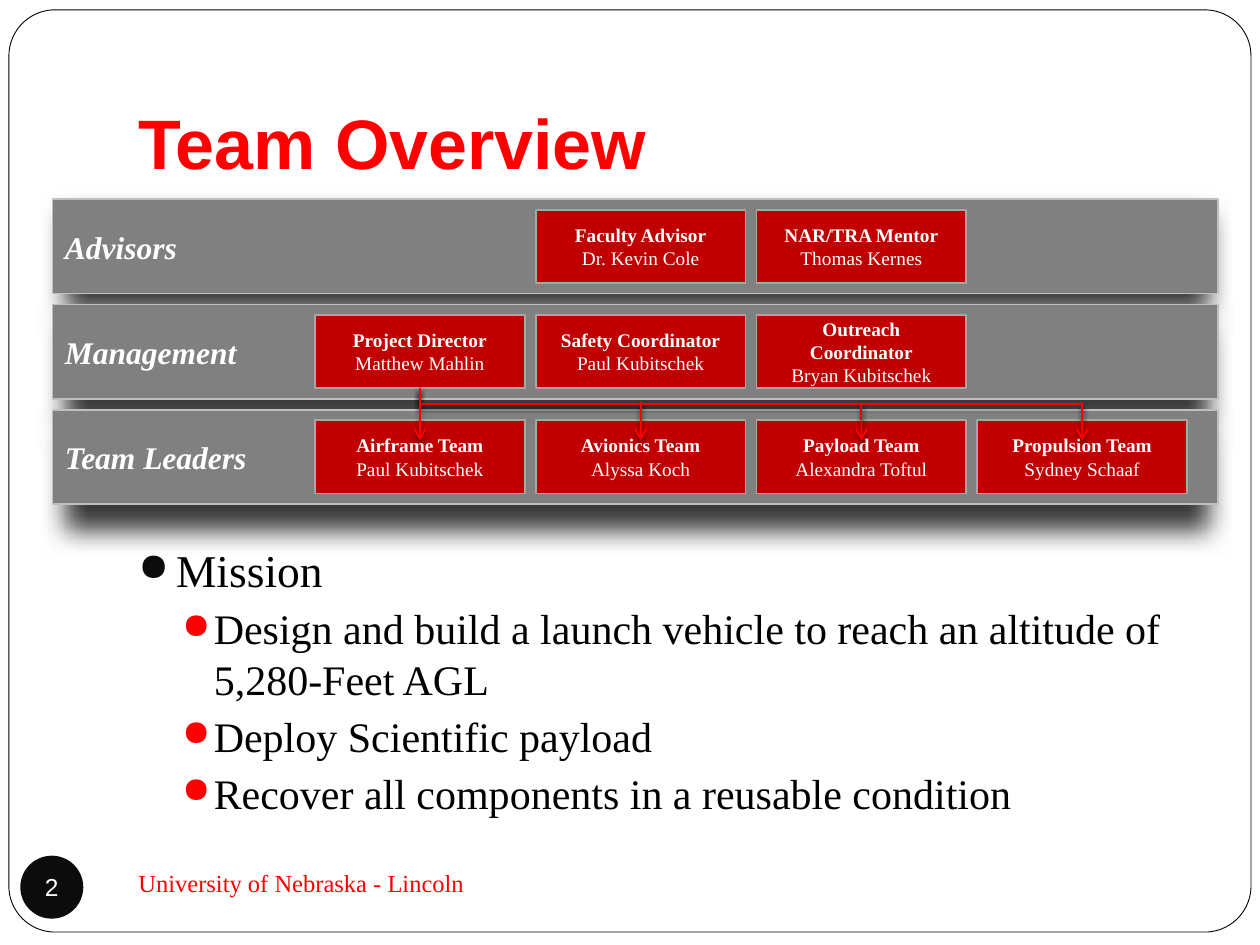
from dataclasses import dataclass

import pptx
import pptx.dml.color
import pptx.enum.shapes
import pptx.enum.text
import pptx.oxml
import pptx.oxml.ns
import pptx.util
from lxml import etree

Cm = pptx.util.Cm
Pt = pptx.util.Pt
qn = pptx.oxml.ns.qn
SHAPE = pptx.enum.shapes.MSO_SHAPE
CONNECTOR = pptx.enum.shapes.MSO_CONNECTOR
ANCHOR = pptx.enum.text.MSO_ANCHOR
ALIGN = pptx.enum.text.PP_ALIGN


@dataclass(frozen=True)
class Theme:
    serif: str = "Times New Roman"
    sans: str = "Arial"
    black: str = "000000"
    ink: str = "0C0C0C"
    white: str = "FFFFFF"
    red: str = "FF0000"
    box: str = "C00000"
    box_line: str = "A6A6A6"
    band: str = "808080"
    band_line: str = "BFBFBF"
    title: int = 40
    body: int = 26
    item: int = 24
    label: int = 18
    small: int = 14
    name: int = 11


T = Theme()

ROWS = [
    ("Advisors", 9, [None, ("Faculty Advisor", "Dr. Kevin Cole"),
                     ("NAR/TRA Mentor", "Thomas Kernes")]),
    ("Management", 14, [("Project Director", "Matthew Mahlin"),
                        ("Safety Coordinator", "Paul Kubitschek"),
                        ("Outreach Coordinator", "Bryan Kubitschek")]),
    ("Team Leaders", 14, [("Airframe Team", "Paul Kubitschek"),
                          ("Avionics Team", "Alyssa Koch"),
                          ("Payload Team", "Alexandra Toftul"),
                          ("Propulsion Team", "Sydney Schaaf")]),
]
MISSION = [
    "Design and build a launch vehicle to reach an altitude of 5,280-Feet AGL",
    "Deploy Scientific payload",
    "Recover all components in a reusable condition",
]


def rgb(color):
    return pptx.dml.color.RGBColor.from_string(color)


def style(p, size, color, font=T.serif, bold=False, italic=False):
    for r in p.runs:
        r.font.name = font
        r.font.size = Pt(size)
        r.font.color.rgb = rgb(color)
        r.font.bold = bold
        r.font.italic = italic


def add_shadow(s, alpha, blur, dist, scale=100):
    sp_pr = s._element.spPr
    for old in sp_pr.findall(qn("a:effectLst")):
        sp_pr.remove(old)
    effects = etree.SubElement(sp_pr, qn("a:effectLst"))
    outer = etree.SubElement(
        effects, qn("a:outerShdw"), blurRad=str(Pt(blur)), dist=str(Pt(dist)),
        dir="5400000", sx=str(scale * 1000), algn="ctr", rotWithShape="0")
    color = etree.SubElement(outer, qn("a:srgbClr"), val=T.black)
    etree.SubElement(color, qn("a:alpha"), val=str(alpha * 1000))


def add_panel(slide, kind, x, y, w, h, fill, line=None, width=1):
    s = slide.shapes.add_shape(kind, Cm(x), Cm(y), Cm(w), Cm(h))
    s.shadow.inherit = False
    s.fill.solid()
    s.fill.fore_color.rgb = rgb(fill)
    if line:
        s.line.color.rgb = rgb(line)
        s.line.width = Pt(width)
    else:
        s.line.fill.background()
    s.text_frame.vertical_anchor = ANCHOR.MIDDLE
    return s


def add_text(slide, x, y, w, h, anchor):
    tf = slide.shapes.add_textbox(Cm(x), Cm(y), Cm(w), Cm(h)).text_frame
    tf.word_wrap = True
    tf.vertical_anchor = anchor
    return tf


def finish_link(cn, arrow):
    cn.line.color.rgb = rgb(T.red)
    cn.line.width = Pt(1)
    if arrow:
        etree.SubElement(cn.line._get_or_add_ln(), qn("a:tailEnd"), type="arrow")
    add_shadow(cn, 50, 3, 2)


def add_arrow(slide, x, y1, y2, start=None):
    cn = slide.shapes.add_connector(CONNECTOR.STRAIGHT, x, y1, x, y2)
    if start is not None:
        cn.begin_connect(start, 2)
    finish_link(cn, True)


def add_branch(slide, start, end):
    x1, y1 = start.left + start.width // 2, start.top + start.height
    x2, y2 = end.left + end.width // 2, end.top
    run, drop = x2 - x1, y2 - y1
    cn = slide.shapes.add_connector(CONNECTOR.ELBOW, x1, y1, x2, y2)
    cn.begin_connect(start, 2)
    cn.end_connect(end, 0)
    cn.left, cn.top = (x1 + x2 - drop) // 2, (y1 + y2 - run) // 2
    cn.width, cn.height = drop, run
    xfrm = cn._element.spPr.find(qn("a:xfrm"))
    xfrm.set("rot", "16200000")
    xfrm.set("flipH", "1")
    finish_link(cn, False)


def add_role(slide, x, y, w, h, lines):
    s = add_panel(slide, SHAPE.RECTANGLE, x, y, w, h, T.box, T.box_line)
    s.text_frame.text = "\n".join(lines)
    for i, p in enumerate(s.text_frame.paragraphs):
        p.alignment = ALIGN.CENTER
        style(p, T.name, T.white, bold=i == 0)
    return s


def add_org_chart(slide, x, y, w):
    pitch_x, pitch_y, band_h = 4.45, 2.12, 1.9
    for i, (label, dist, _) in enumerate(ROWS):
        s = add_panel(slide, SHAPE.FLOWCHART_PROCESS, x, y + i * pitch_y, w, band_h,
                      T.band, T.band_line)
        add_shadow(s, 76, 15, dist, 98)
        s.text_frame.text = label
        p = s.text_frame.paragraphs[0]
        p.alignment = ALIGN.LEFT
        style(p, T.label, T.white, bold=True, italic=True)
    grid = [[add_role(slide, x + 5.29 + j * pitch_x, y + 0.21 + i * pitch_y,
                      4.23, 1.48, role)
             for j, role in enumerate(roles) if role]
            for i, (_, _, roles) in enumerate(ROWS)]
    director, leaders = grid[1][0], grid[2]
    for leader in leaders[1:]:
        add_branch(slide, director, leader)
    for i, leader in enumerate(leaders):
        center = leader.left + leader.width // 2
        tip = leader.top + Cm(0.41)
        if i == 0:
            add_arrow(slide, center, director.top + director.height, tip, director)
        else:
            add_arrow(slide, center, leader.top - Cm(0.36), tip)


def add_bullet(p, indent, hanging, color):
    p_pr = p._p.get_or_add_pPr()
    p_pr.set("marL", str(Cm(indent)))
    p_pr.set("indent", str(-Cm(hanging)))
    clr = etree.SubElement(p_pr, qn("a:buClr"))
    etree.SubElement(clr, qn("a:srgbClr"), val=color)
    etree.SubElement(p_pr, qn("a:buSzPct"), val="85000")
    etree.SubElement(p_pr, qn("a:buChar"), char="●")


def add_mission(slide, x, y, w, h):
    tf = add_text(slide, x, y, w, h, ANCHOR.TOP)
    tf.text = "\n".join(["Mission"] + MISSION)
    for i, p in enumerate(tf.paragraphs):
        p.level = min(i, 1)
        p.space_before = Pt(3.7 if i else 5.8)
        style(p, T.item if i else T.body, T.black)
        if i:
            add_bullet(p, 1.52, 0.64, T.red)
        else:
            add_bullet(p, 0.76, 0.76, T.ink)


def add_title(slide, x, y, w, h):
    tf = add_text(slide, x, y, w, h, ANCHOR.BOTTOM)
    tf.margin_bottom = Cm(0.25)
    tf.text = "Team Overview"
    style(tf.paragraphs[0], T.title, T.red, T.sans, bold=True)


def add_footer(slide, x, y):
    s = add_panel(slide, SHAPE.OVAL, x, y + 0.1, 1.27, 1.27, T.ink)
    tf = s.text_frame
    tf.margin_left = tf.margin_right = tf.margin_top = tf.margin_bottom = 0
    tf.word_wrap = False
    tf.text = "2"
    tf.paragraphs[0].alignment = ALIGN.CENTER
    style(tf.paragraphs[0], T.small, T.white, T.sans)
    tf = add_text(slide, x + 2.13, y, 11, 1.27, ANCHOR.MIDDLE)
    tf.text = "University of Nebraska - Lincoln"
    style(tf.paragraphs[0], T.small, T.red)


def main():
    prs = pptx.Presentation()
    prs.slide_width, prs.slide_height = Cm(25.4), Cm(19.05)
    slide = prs.slides.add_slide(prs.slide_layouts[6])
    frame = add_panel(slide, SHAPE.ROUNDED_RECTANGLE, 0.18, 0.2, 25.04, 18.59,
                      T.white, T.black, 0.5)
    frame.adjustments[0] = 0.05
    add_org_chart(slide, 1.06, 4.02, 23.5)
    add_title(slide, 2.54, 0.76, 21.59, 3.18)
    add_mission(slide, 2.54, 10.8, 21.59, 5.92)
    add_footer(slide, 0.41, 17.15)
    prs.save("out.pptx")


if __name__ == "__main__":
    main()
